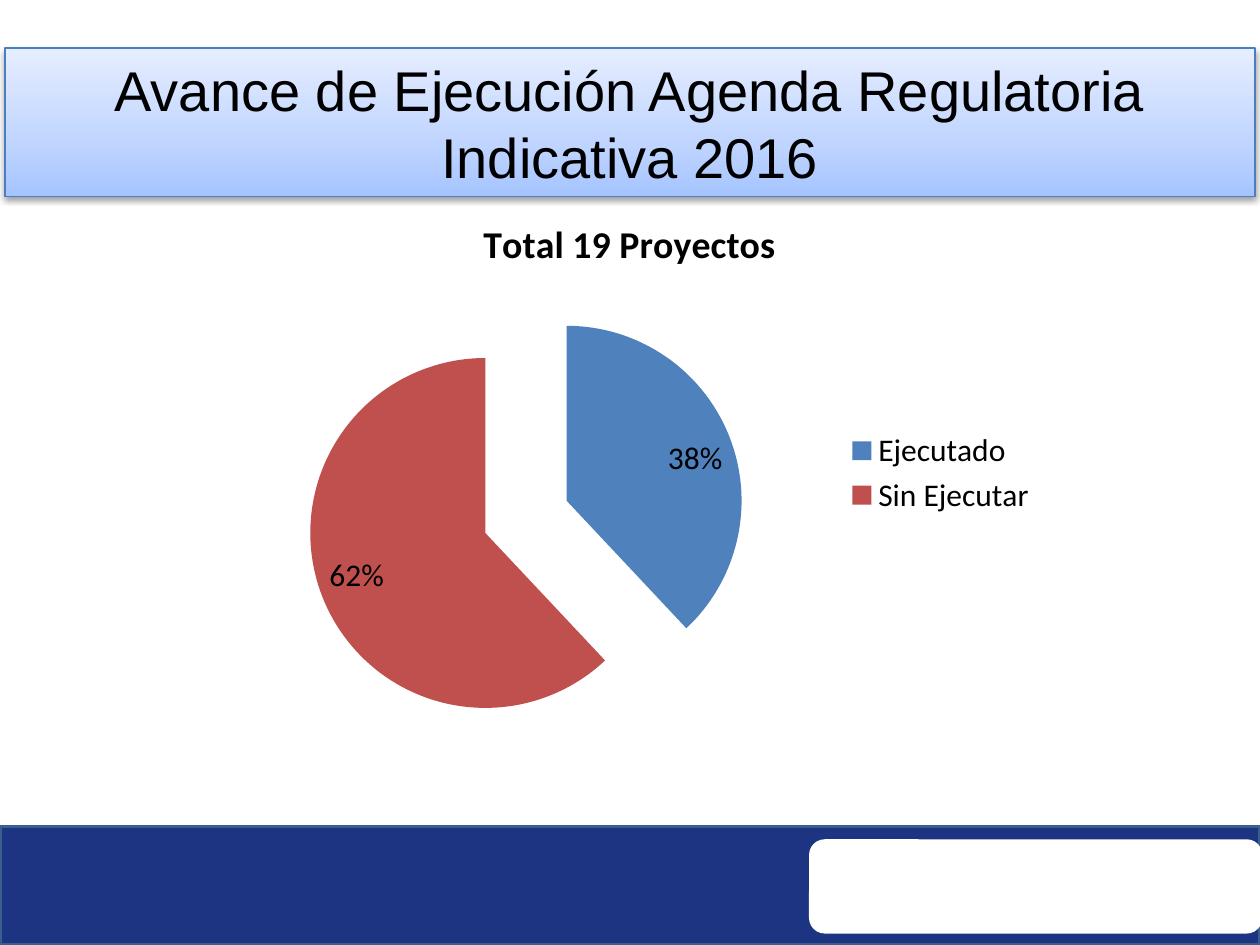
from lxml import etree
from pptx import Presentation
from pptx.chart.data import CategoryChartData
from pptx.dml.color import RGBColor
from pptx.enum.chart import XL_CHART_TYPE, XL_LABEL_POSITION, XL_LEGEND_POSITION
from pptx.enum.shapes import MSO_SHAPE
from pptx.enum.text import MSO_ANCHOR, PP_ALIGN
from pptx.oxml.ns import qn
from pptx.util import Cm, Pt

RECTANGLE = MSO_SHAPE.RECTANGLE
ROUNDED = MSO_SHAPE.ROUNDED_RECTANGLE
PIE = XL_CHART_TYPE.PIE
INSIDE_END = XL_LABEL_POSITION.INSIDE_END
LEGEND_RIGHT = XL_LEGEND_POSITION.RIGHT
CENTER = PP_ALIGN.CENTER
MIDDLE = MSO_ANCHOR.MIDDLE

CHART_TITLE = "Total 19 Proyectos"
PROGRESS = {"Ejecutado": (0.38, "4F81BD"), "Sin Ejecutar": (0.62, "C0504D")}
BANNER_STOPS = [(0, "A4C4FF"), (35, "BFD4FF"), (100, "E6EEFF")]


def color(value):
    return RGBColor.from_string(value)


def add_block(slide, kind, box, fill=None, line=None, line_width=1):
    block = slide.shapes.add_shape(kind, *map(Cm, box))
    block.shadow.inherit = False
    if fill:
        block.fill.solid()
        block.fill.fore_color.rgb = color(fill)
    if line:
        block.line.color.rgb = color(line)
        block.line.width = Pt(line_width)
    else:
        block.line.fill.background()
    return block


def add_color_xml(parent, value):
    return etree.SubElement(parent, qn("a:srgbClr"), val=value)


def set_gradient(block, stops, angle):
    """Fill with (percent, colour) stops; the angle runs counter-clockwise."""
    block.fill.gradient()
    block.fill.gradient_angle = angle
    stop_list = block.element.spPr.find(".//" + qn("a:gsLst"))
    for old_stop in list(stop_list):
        stop_list.remove(old_stop)
    for percent, value in stops:
        stop = etree.SubElement(stop_list, qn("a:gs"), pos=str(percent * 1000))
        add_color_xml(stop, value)


def set_drop_shadow(block, value, opacity, blur, distance):
    effects = block.element.spPr.find(qn("a:effectLst"))
    shadow = etree.SubElement(
        effects, qn("a:outerShdw"), blurRad=str(Pt(blur)), dist=str(Pt(distance)),
        dir=str(90 * 60000), rotWithShape="0")
    shadow_color = add_color_xml(shadow, value)
    etree.SubElement(shadow_color, qn("a:alpha"), val=str(opacity * 1000))


def write_text(frame, text, font="Calibri", size=18, bold=False, ink="000000", align=CENTER):
    paragraph = frame.paragraphs[0]
    paragraph.alignment = align
    run = paragraph.add_run()
    run.text = text
    run.font.name = font
    run.font.size = Pt(size)
    run.font.bold = bold
    run.font.color.rgb = color(ink)


def add_title_banner(slide):
    banner = add_block(slide, RECTANGLE, (0.1, 0.97, 25.2, 3), line="4B7EBC", line_width=0.75)
    set_gradient(banner, BANNER_STOPS, angle=90)
    set_drop_shadow(banner, "000000", opacity=38, blur=3.1, distance=1.6)
    banner.text_frame.word_wrap = True
    banner.text_frame.vertical_anchor = MIDDLE
    write_text(banner.text_frame, "Avance de Ejecución Agenda Regulatoria Indicativa 2016",
               font="Arial", size=32)


def add_progress_pie(slide):
    data = CategoryChartData(number_format="0%")
    data.categories = list(PROGRESS)
    data.add_series(CHART_TITLE, [share for share, _ in PROGRESS.values()])
    box = map(Cm, (4.23, 3.89, 16.93, 11.29))
    chart = slide.shapes.add_chart(PIE, *box, data).chart
    chart.font.name = "Calibri"
    chart.font.size = Pt(18)
    chart.font.color.rgb = color("000000")
    chart.has_title = True
    write_text(chart.chart_title.text_frame, CHART_TITLE, size=21.6, bold=True)
    chart.has_legend = True
    chart.legend.position = LEGEND_RIGHT
    chart.legend.include_in_layout = False

    plot = chart.plots[0]
    series = plot.series[0]
    for index, (_, slice_color) in enumerate(PROGRESS.values()):
        pie_slice = series.points[index].format.fill
        pie_slice.solid()
        pie_slice.fore_color.rgb = color(slice_color)
    explosion = etree.Element(qn("c:explosion"), val="25")
    series._element.find(qn("c:dPt")).addprevious(explosion)

    labels = series.data_labels
    labels.show_value = True
    labels.number_format = "0%"
    labels.number_format_is_linked = False
    labels.position = INSIDE_END


def main():
    deck = Presentation()
    deck.slide_width, deck.slide_height = Cm(25.4), Cm(19.05)
    slide = deck.slides.add_slide(deck.slide_layouts[6])
    add_block(slide, RECTANGLE, (0, 16.66, 25.4, 2.39), "1C3481", "3A5F8C", 2)
    add_block(slide, ROUNDED, (16.31, 16.92, 9.14, 1.9), "FFFFFF")
    add_title_banner(slide)
    add_progress_pie(slide)
    deck.save("out.pptx")


if __name__ == "__main__":
    main()
